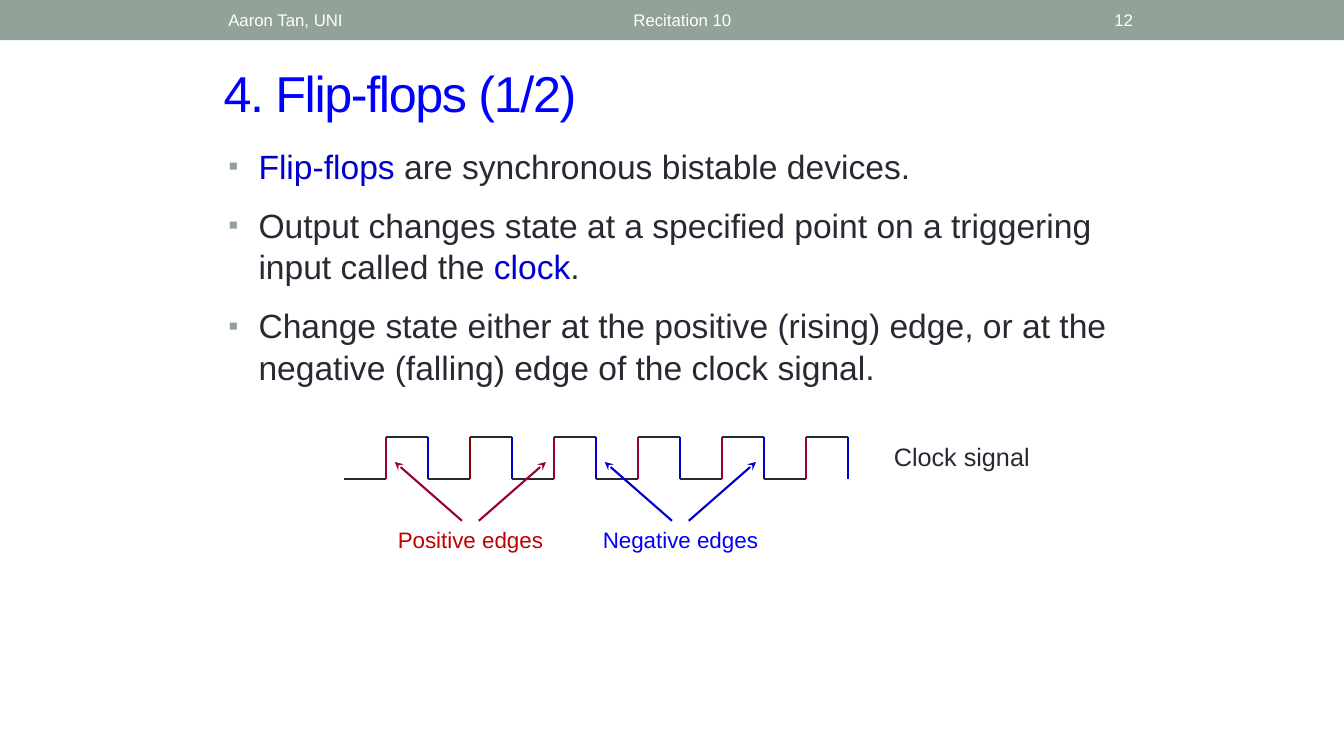
from dataclasses import dataclass

from lxml.etree import SubElement
from pptx import Presentation
from pptx.dml.color import RGBColor
from pptx.enum.shapes import MSO_CONNECTOR, MSO_SHAPE
from pptx.enum.text import MSO_ANCHOR, PP_ALIGN
from pptx.oxml.ns import qn
from pptx.util import Pt


@dataclass(frozen=True)
class Theme:
    font: str = "Arial"
    sage: str = "93A299"
    ink: str = "292934"
    white: str = "FFFFFF"
    blue: str = "0000FF"
    navy: str = "0000CC"
    red: str = "C00000"
    wine: str = "990033"
    maroon: str = "800000"
    title: int = 36
    body: int = 24
    label: int = 18
    note: int = 16
    small: int = 12
    stroke: float = 1.5


THEME = Theme()


def dress(item, **values):
    for name, value in values.items():
        setattr(item, name, value)


def write(para, text, size, color):
    run = para.add_run()
    run.text = text
    dress(run.font, name=THEME.font, size=Pt(size))
    run.font.color.rgb = RGBColor.from_string(color)
    return run


def frame(shapes, box, anchor=MSO_ANCHOR.TOP):
    area = shapes.add_textbox(*map(Pt, box)).text_frame
    dress(area, word_wrap=True, vertical_anchor=anchor)
    return area


def label(shapes, box, text, size, color, align=PP_ALIGN.CENTER, anchor=MSO_ANCHOR.TOP):
    para = frame(shapes, box, anchor).paragraphs[0]
    para.alignment = align
    return write(para, text, size, color)


def line(shapes, start, end, color, arrow=False):
    wire = shapes.add_connector(MSO_CONNECTOR.STRAIGHT, *map(Pt, (*start, *end)))
    wire.line.width = Pt(THEME.stroke)
    wire.line.color.rgb = RGBColor.from_string(color)
    props = wire.element.spPr
    if arrow:
        SubElement(props.find(qn("a:ln")), qn("a:tailEnd"), type="stealth")
    SubElement(props, qn("a:effectLst"))


def header(shapes, box, items):
    left, top, width, height = box
    band = shapes.add_shape(MSO_SHAPE.RECTANGLE, *map(Pt, box))
    band.shadow.inherit = False
    band.fill.solid()
    band.fill.fore_color.rgb = RGBColor.from_string(THEME.sage)
    band.line.fill.background()
    for start, span, text, align in items:
        place = (left + start, top + 1.4, span, height - 2.8)
        label(shapes, place, text, THEME.small, THEME.white, align, MSO_ANCHOR.MIDDLE)


def title(shapes, box, text):
    run = label(shapes, box, text, THEME.title, THEME.blue, PP_ALIGN.LEFT, MSO_ANCHOR.MIDDLE)
    run.font.element.set("spc", "-100") if hasattr(run.font, "element") else run._r.get_or_add_rPr().set("spc", "-100")


def bullets(shapes, box, points):
    area = frame(shapes, box)
    for index, parts in enumerate(points):
        para = area.add_paragraph() if index else area.paragraphs[0]
        dress(para, space_before=Pt(12 if index else 0), line_spacing=1.04)
        props = para._p.get_or_add_pPr()
        dent = Pt(21.6)
        props.set("marL", str(dent))
        props.set("indent", str(-dent))
        tint = SubElement(props, qn("a:buClr"))
        SubElement(tint, qn("a:srgbClr"), val=THEME.sage)
        SubElement(props, qn("a:buSzPct"), val="85000")
        SubElement(props, qn("a:buFont"), typeface=THEME.font)
        SubElement(props, qn("a:buChar"), char="▪")
        for text, color in parts:
            write(para, text, THEME.body, color)


def clock(shapes, box, count):
    left, high, width, step = box
    low = high + step
    group = shapes.add_group_shape().shapes
    for pulse in range(count):
        start = left + 2 * pulse * step
        rise, fall = start + step, start + 2 * step
        edge = THEME.maroon if pulse == 1 else THEME.wine
        line(group, (start, low), (rise, low), THEME.ink)
        line(group, (rise, high), (fall, high), THEME.ink)
        line(group, (rise, high), (rise, low), edge)
        line(group, (fall, high), (fall, low), THEME.navy)

    base = low + step
    notes = (
        (30, 120, "Positive edges", THEME.red, 90, THEME.wine),
        (174, 132, "Negative edges", THEME.blue, 240, THEME.navy),
    )
    for start, span, text, color, hub, tint in notes:
        label(group, (left + start, base, span, 26.6), text, THEME.note, color)
        for side in (-1, 1):
            tail = (left + hub + side * 6, base)
            head = (left + hub + side * 54, high + 18)
            line(group, tail, head, tint, arrow=True)
    label(group, (left + width + 18, high, 126, 29), "Clock signal", THEME.label, THEME.ink)


def main():
    deck = Presentation()
    dress(deck, slide_width=Pt(960), slide_height=Pt(540))
    shapes = deck.slides.add_slide(deck.slide_layouts[6]).shapes
    header(shapes, (0, 0, 960, 28.8), (
        (156, 228, "Aaron Tan, UNI", PP_ALIGN.LEFT),
        (325.5, 324, "Recitation 10", PP_ALIGN.CENTER),
        (748, 68.4, "12", PP_ALIGN.RIGHT),
    ))
    title(shapes, (152.6, 41, 663, 50.4), "4. Flip-flops (1/2)")
    bullets(shapes, (156, 99.4, 648, 186.5), (
        (("Flip-flops", THEME.navy), (" are synchronous bistable devices.", THEME.ink)),
        (
            ("Output changes state at a specified point on a triggering input called the ", THEME.ink),
            ("clock", THEME.navy),
            (".", THEME.ink),
        ),
        ((
            "Change state either at the positive (rising) edge, or at the negative "
            "(falling) edge of the clock signal.", THEME.ink),
        ),
    ))
    clock(shapes, (246, 312, 360, 30), 6)
    deck.save("out.pptx")


if __name__ == "__main__":
    main()
